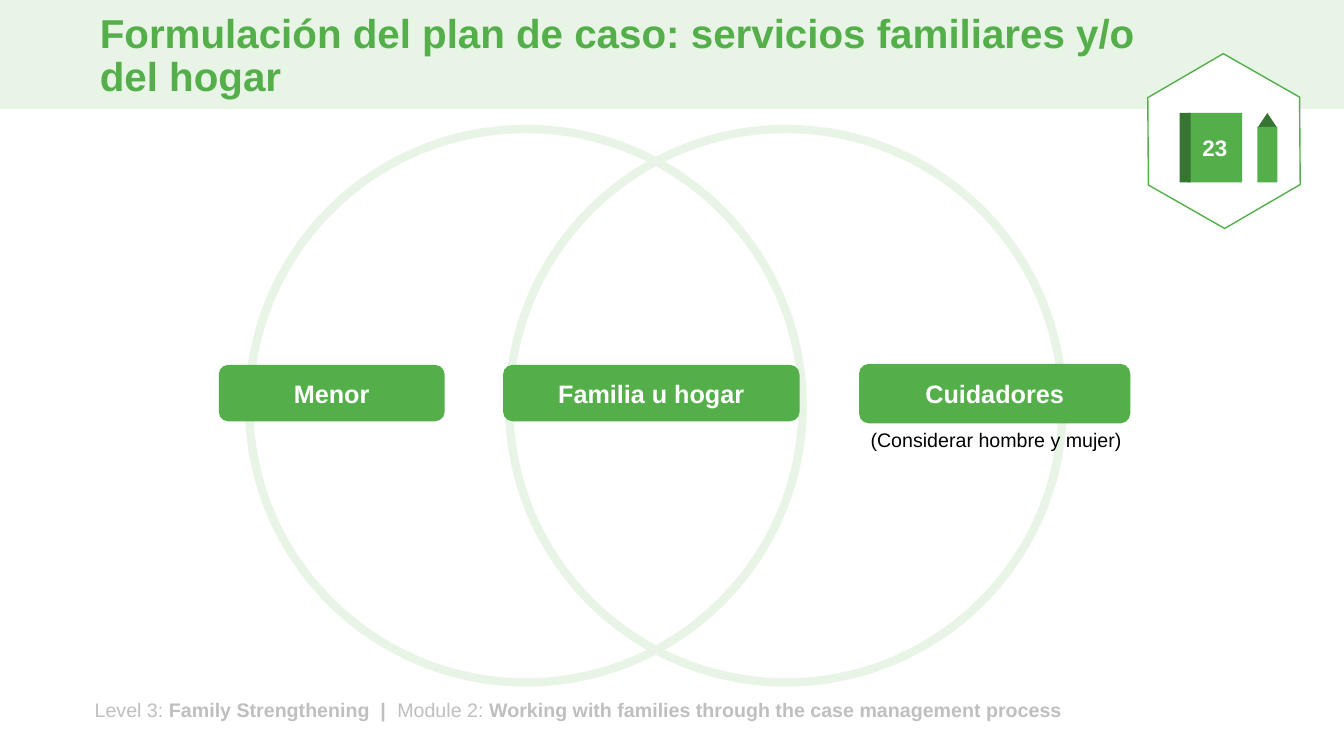
import dataclasses

import pptx
import pptx.dml.color
import pptx.enum.shapes
import pptx.enum.text
import pptx.util

Inches = pptx.util.Inches
Shape = pptx.enum.shapes.MSO_SHAPE
Align = pptx.enum.text.PP_ALIGN
Anchor = pptx.enum.text.MSO_ANCHOR


@dataclasses.dataclass(frozen=True)
class Theme:
    font: str = "Arial"
    green: str = "54AF4B"
    dark_green: str = "387532"
    pale_green: str = "E8F4E6"
    white: str = "FFFFFF"
    black: str = "000000"
    gray: str = "BFBFBF"
    title_size: float = 28.8
    label_size: float = 18
    badge_size: float = 16
    note_size: float = 14


THEME = Theme()


def rgb(color):
    return pptx.dml.color.RGBColor.from_string(color)


def place(shape, left, top, width, height):
    shape.left, shape.top = Inches(left), Inches(top)
    shape.width, shape.height = Inches(width), Inches(height)


def write(frame, text, size, color, bold=False, align=Align.LEFT,
          anchor=Anchor.TOP, spacing=None, wrap=True):
    """Fill a frame with a string, or with (string, bold) pairs."""
    frame.word_wrap = wrap
    frame.vertical_anchor = anchor
    paragraph = frame.paragraphs[0]
    paragraph.alignment = align
    if spacing:
        paragraph.line_spacing = spacing
    for words, heavy in [(text, bold)] if isinstance(text, str) else text:
        run = paragraph.add_run()
        run.text = words
        run.font.name = THEME.font
        run.font.size = pptx.util.Pt(size)
        run.font.bold = heavy
        run.font.color.rgb = rgb(color)


def add_figure(slide, kind, box, fill=None, line=None, line_width=1):
    figure = slide.shapes.add_shape(kind, *map(Inches, box))
    figure.shadow.inherit = False
    if fill:
        figure.fill.solid()
        figure.fill.fore_color.rgb = rgb(fill)
    else:
        figure.fill.background()
    if line:
        figure.line.color.rgb = rgb(line)
        figure.line.width = pptx.util.Pt(line_width)
    else:
        figure.line.fill.background()
    return figure


def add_note(slide, box, text, **style):
    note = slide.shapes.add_textbox(*map(Inches, box))
    write(note.text_frame, text, THEME.note_size, **style)


def add_label(slide, box, text):
    label = add_figure(slide, Shape.ROUNDED_RECTANGLE, box, THEME.green)
    write(label.text_frame, text, THEME.label_size, THEME.white, bold=True,
          align=Align.CENTER, anchor=Anchor.MIDDLE)


def add_header(slide, text):
    band = add_figure(slide, Shape.RECTANGLE, (0, 0, 13.33, 1.08), THEME.pale_green)
    heading = slide.shapes.title
    heading._element.addprevious(band._element)  # the band lies behind the title
    place(heading, 0.89, 0.09, 10.9, 0.95)
    write(heading.text_frame, text, THEME.title_size, THEME.green, bold=True,
          anchor=Anchor.MIDDLE, spacing=0.9)


def add_workbook_badge(slide, page):
    hexagon = add_figure(slide, Shape.HEXAGON, (11.27, 0.65, 1.74, 1.5),
                         THEME.white, THEME.green)
    hexagon.adjustments[0] = 0.29
    hexagon.adjustments[1] = 1.155
    hexagon.rotation = 29.7

    # Book with its page number, then spine and pencil
    book = add_figure(slide, Shape.RECTANGLE, (11.78, 1.12, 0.54, 0.69), THEME.green)
    write(book.text_frame, page, THEME.badge_size, THEME.white, bold=True,
          align=Align.CENTER, anchor=Anchor.MIDDLE, wrap=False)
    add_figure(slide, Shape.RECTANGLE, (11.7, 1.12, 0.11, 0.69), THEME.dark_green)
    add_figure(slide, Shape.ISOSCELES_TRIANGLE, (12.47, 1.12, 0.2, 0.15), THEME.dark_green)
    add_figure(slide, Shape.RECTANGLE, (12.47, 1.26, 0.2, 0.55), THEME.green)


def main():
    deck = pptx.Presentation()
    deck.slide_width, deck.slide_height = Inches(13.33), Inches(7.5)
    slide = deck.slides.add_slide(deck.slide_layouts[5])

    # Header and footer
    add_header(slide, "Formulación del plan de caso: servicios familiares y/o del hogar")
    add_note(slide, (0.84, 6.87, 10.62, 0.34), [
        ("Level 3: ", False),
        ("Family Strengthening  |  ", True),
        ("Module 2: ", False),
        ("Working with families through the case management process", True),
    ], color=THEME.gray)
    add_workbook_badge(slide, "23")

    # Overlapping circles
    for left in (2.47, 5.05):
        add_figure(slide, Shape.OVAL, (left, 1.28, 5.49, 5.49),
                   line=THEME.pale_green, line_width=6)

    # Labels of the three areas
    add_label(slide, (2.17, 3.62, 2.24, 0.56), "Menor")
    add_label(slide, (4.99, 3.62, 2.94, 0.56), "Familia u hogar")
    add_label(slide, (8.52, 3.61, 2.69, 0.59), "Cuidadores")
    add_note(slide, (8.52, 4.2, 2.72, 0.34), "(Considerar hombre y mujer)",
             color=THEME.black, align=Align.CENTER)

    deck.save("out.pptx")


if __name__ == "__main__":
    main()
